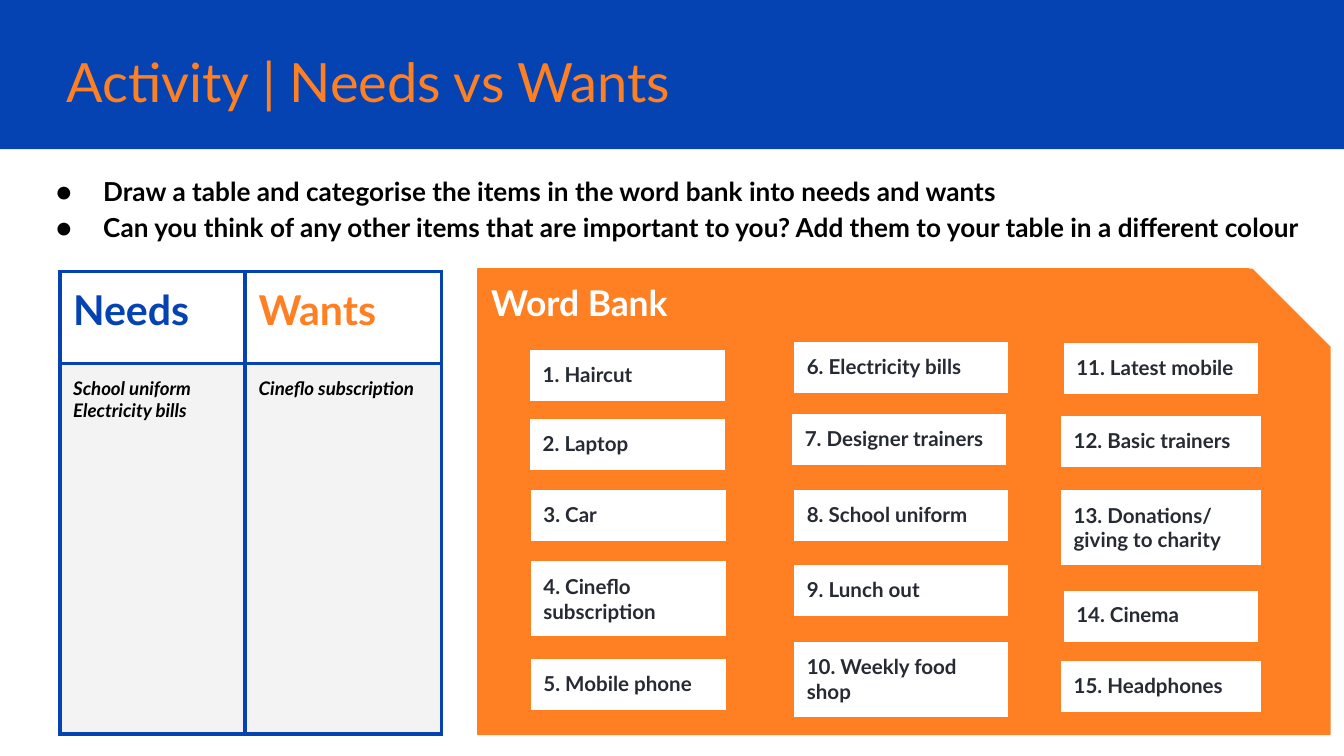
from dataclasses import dataclass

from lxml import etree
from pptx import Presentation
from pptx import util as u
from pptx.dml.color import RGBColor
from pptx.enum import shapes, text
from pptx.oxml.ns import qn


@dataclass(frozen=True)
class Theme:
    font: str = "Lato"
    blue: str = "0543B3"
    orange: str = "FF8022"
    white: str = "FFFFFF"
    grey: str = "F3F3F3"
    ink: str = "262A33"
    black: str = "000000"
    title: float = 29
    heading: float = 22
    bank: float = 19
    body: float = 14
    card: float = 11
    example: float = 10
    outline: float = 0.75
    border: float = 2.25


THEME = Theme()
WIDTH = u.Inches(10)
HEIGHT = WIDTH * 9 // 16
COLUMNS, ROWS = 100, 56.25
SHORT, TALL = 3.9, 5.7

WORD_BANK = [
    ("Haircut", 39.4, 26, 14.6, SHORT),
    ("Laptop", 39.4, 31.15, 14.6, SHORT),
    ("Car", 39.45, 36.4, 14.6, SHORT),
    ("Cineflo subscription", 39.45, 41.7, 14.6, TALL),
    ("Mobile phone", 39.45, 49, 14.6, SHORT),
    ("Electricity bills", 59.05, 25.4, 16, SHORT),
    ("Designer trainers", 58.9, 30.75, 16, SHORT),
    ("School uniform", 59.05, 36.4, 16, SHORT),
    ("Lunch out", 59.05, 42, 16, SHORT),
    ("Weekly food shop", 59.05, 47.7, 16, TALL),
    ("Latest mobile", 79.1, 25.5, 14.6, SHORT),
    ("Basic trainers", 78.9, 30.9, 15, SHORT),
    ("Donations/ giving to charity", 78.9, 36.4, 15, TALL),
    ("Cinema", 79.1, 43.9, 14.6, SHORT),
    ("Headphones", 78.9, 49.15, 15, SHORT),
]


def cols(count):
    return round(WIDTH * count / COLUMNS)


def rows(count):
    return round(HEIGHT * count / ROWS)


def area(left, top, width, height):
    return cols(left), rows(top), cols(width), rows(height)


def color(value):
    return RGBColor.from_string(value)


def add_bullet(paragraph):
    props = paragraph._p.get_or_add_pPr()
    props.set("marL", str(cols(5)))
    props.set("indent", str(-cols(3.5)))
    bullet_color = etree.SubElement(props, qn("a:buClr"))
    etree.SubElement(bullet_color, qn("a:srgbClr")).set("val", THEME.black)
    etree.SubElement(props, qn("a:buFont")).set("typeface", THEME.font)
    etree.SubElement(props, qn("a:buChar")).set("char", "●")


def write(frame, *lines, size, ink, bold=False, italic=False, bullets=False,
          spacing=None, anchor=text.MSO_ANCHOR.TOP):
    frame.word_wrap = True
    frame.vertical_anchor = anchor
    frame.margin_left = frame.margin_right = cols(1)
    frame.margin_top = frame.margin_bottom = rows(1)
    for index, line in enumerate(lines):
        paragraph = frame.add_paragraph() if index else frame.paragraphs[0]
        paragraph.alignment = text.PP_ALIGN.LEFT
        if spacing:
            paragraph.line_spacing = spacing
        if bullets:
            add_bullet(paragraph)
        run = paragraph.add_run()
        run.text = line
        run.font.name = THEME.font
        run.font.size = u.Pt(size)
        run.font.bold = bold
        run.font.italic = italic
        run.font.color.rgb = color(ink)


def add_panel(slide, place, fill=None, outline=None, kind=shapes.MSO_SHAPE.RECTANGLE):
    panel = slide.shapes.add_shape(kind, *place)
    panel.shadow.inherit = False
    if fill:
        panel.fill.solid()
        panel.fill.fore_color.rgb = color(fill)
    else:
        panel.fill.background()
    if outline:
        panel.line.color.rgb = color(outline)
        panel.line.width = u.Pt(THEME.outline)
    else:
        panel.line.fill.background()
    return panel


def add_header(slide):
    add_panel(slide, area(0, 0, COLUMNS, 11.1), THEME.blue)
    title = slide.shapes.add_textbox(*area(3.95, 3.2, 84.6, 5.6))
    write(title.text_frame, "Activity | Needs vs Wants", size=THEME.title,
          ink=THEME.orange, anchor=text.MSO_ANCHOR.MIDDLE)


def add_instructions(slide):
    instructions = slide.shapes.add_textbox(*area(1.7, 11.7, 97.3, 7.1))
    write(instructions.text_frame,
          "Draw a table and categorise the items in the word bank into needs and wants",
          "Can you think of any other items that are important to you? "
          "Add them to your table in a different colour",
          size=THEME.body, ink=THEME.black, bold=True, bullets=True, spacing=1.15)


def add_borders(cell):
    props = cell._tc.get_or_add_tcPr()
    for index, side in enumerate(("lnL", "lnR", "lnT", "lnB")):
        edge = etree.Element(qn(f"a:{side}"), w=str(u.Pt(THEME.border)))
        fill = etree.SubElement(edge, qn("a:solidFill"))
        etree.SubElement(fill, qn("a:srgbClr")).set("val", THEME.blue)
        props.insert(index, edge)


def add_sorting_table(slide):
    categories = [
        ("Needs", THEME.blue, 13.8, ["School uniform", "Electricity bills"]),
        ("Wants", THEME.orange, 14.6, ["Cineflo subscription"]),
    ]
    table = slide.shapes.add_table(2, 2, *area(4.45, 20.2, 28.4, 34.4)).table
    table.first_row = table.horz_banding = False
    for row, height in zip(table.rows, (6.85, 27.55)):
        row.height = rows(height)
    for index, (name, ink, width, examples) in enumerate(categories):
        table.columns[index].width = cols(width)
        heading, answers = table.cell(0, index), table.cell(1, index)
        heading.fill.background()
        answers.fill.solid()
        answers.fill.fore_color.rgb = color(THEME.grey)
        write(heading.text_frame, name, size=THEME.heading, ink=ink, bold=True)
        write(answers.text_frame, *examples, size=THEME.example, ink=THEME.black,
              bold=True, italic=True)
        for cell in (heading, answers):
            cell.margin_left = cell.margin_right = cols(1)
            cell.margin_top = cell.margin_bottom = rows(1)
            add_borders(cell)


def add_card(slide, label, place):
    card = add_panel(slide, place, THEME.white, THEME.orange)
    write(card.text_frame, label, size=THEME.card, ink=THEME.ink, bold=True)
    card.text_frame.auto_size = text.MSO_AUTO_SIZE.SHAPE_TO_FIT_TEXT


def add_word_bank(slide):
    snipped = shapes.MSO_SHAPE.SNIP_1_RECTANGLE
    add_panel(slide, area(35.55, 20.05, 63.4, 34.6), THEME.orange, THEME.orange, snipped)
    for number, (item, *place) in enumerate(WORD_BANK, 1):
        add_card(slide, f"{number}. {item}", area(*place))
    heading = add_panel(slide, area(35.55, 20, 58.1, 4.6), outline=THEME.orange, kind=snipped)
    write(heading.text_frame, "Word Bank", size=THEME.bank, ink=THEME.white, bold=True,
          anchor=text.MSO_ANCHOR.MIDDLE)


def main():
    deck = Presentation()
    deck.slide_width, deck.slide_height = WIDTH, HEIGHT
    slide = deck.slides.add_slide(deck.slide_layouts[6])
    add_header(slide)
    add_instructions(slide)
    add_sorting_table(slide)
    add_word_bank(slide)
    deck.save("out.pptx")


if __name__ == "__main__":
    main()
